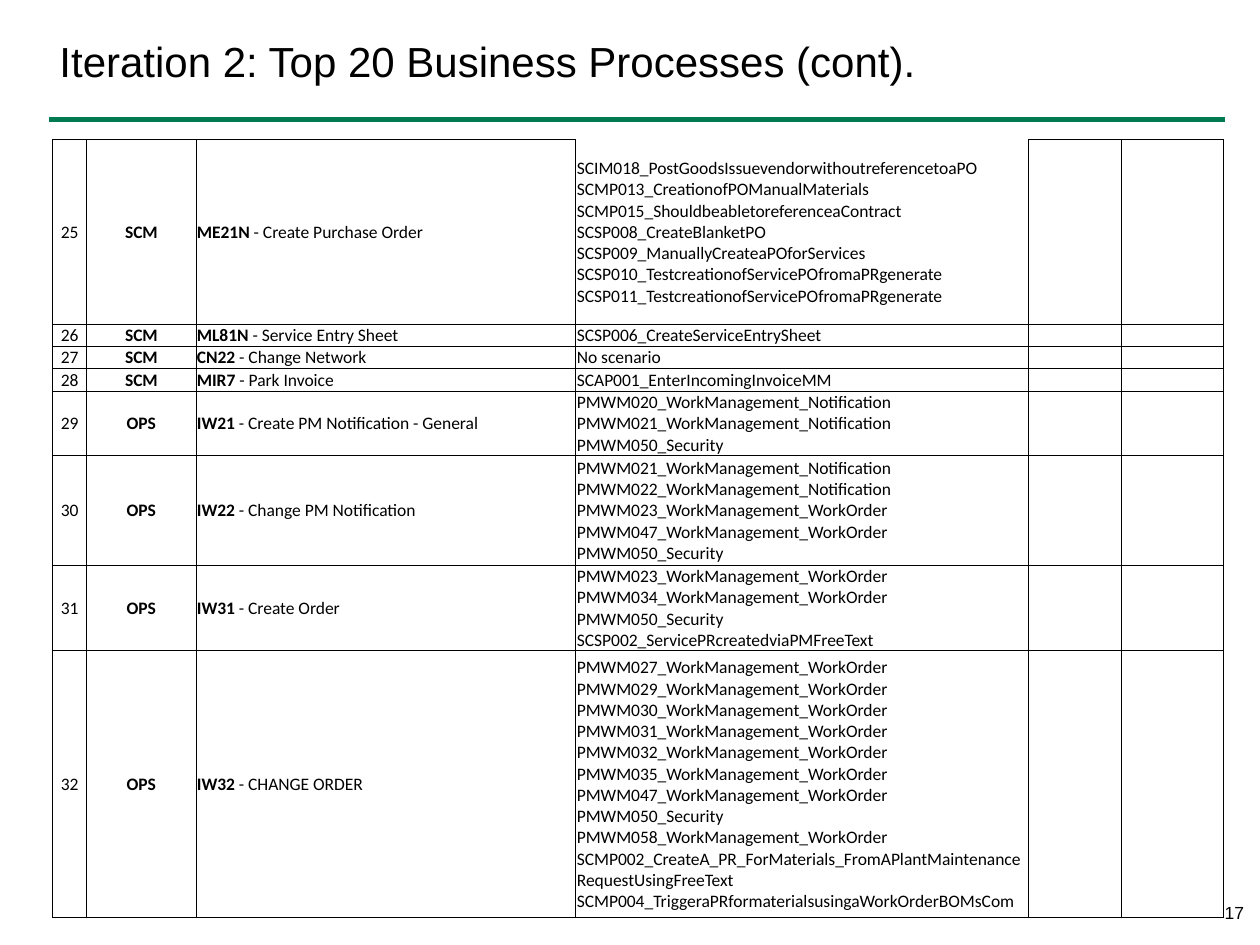
"""Builds the slide that lists business processes 25 to 32 and their test scenarios."""
from lxml.etree import SubElement
from pptx import Presentation
from pptx.dml.color import RGBColor
from pptx.enum.shapes import MSO_CONNECTOR as Connector
from pptx.enum.text import MSO_ANCHOR as Anchor, PP_ALIGN as Align
from pptx.oxml.ns import qn
from pptx.util import Cm, Pt

BLACK = RGBColor(0x00, 0x00, 0x00)
WHITE = RGBColor(0xFF, 0xFF, 0xFF)
GREEN = RGBColor(0x00, 0x7A, 0x50)

COLUMN_WIDTHS = [0.69, 2.2, 7.66, 9.13, 1.87, 2.06]
ROW_HEIGHTS = [3.71, 0.45, 0.45, 0.45, 1.31, 2.2, 1.73, 5.38]
FIRST_NUMBER = 25
SCENARIO_COLUMN = 3

PROCESSES = [
    ("SCM", "ME21N", "Create Purchase Order", [
        "SCIM018_PostGoodsIssuevendorwithoutreferencetoaPO",
        "SCMP013_CreationofPOManualMaterials",
        "SCMP015_ShouldbeabletoreferenceaContract",
        "SCSP008_CreateBlanketPO",
        "SCSP009_ManuallyCreateaPOforServices",
        "SCSP010_TestcreationofServicePOfromaPRgenerate",
        "SCSP011_TestcreationofServicePOfromaPRgenerate"]),
    ("SCM", "ML81N", "Service Entry Sheet", ["SCSP006_CreateServiceEntrySheet"]),
    ("SCM", "CN22", "Change Network", ["No scenario"]),
    ("SCM", "MIR7", "Park Invoice", ["SCAP001_EnterIncomingInvoiceMM"]),
    ("OPS", "IW21", "Create PM Notification - General", [
        "PMWM020_WorkManagement_Notification",
        "PMWM021_WorkManagement_Notification",
        "PMWM050_Security"]),
    ("OPS", "IW22", "Change PM Notification", [
        "PMWM021_WorkManagement_Notification",
        "PMWM022_WorkManagement_Notification",
        "PMWM023_WorkManagement_WorkOrder",
        "PMWM047_WorkManagement_WorkOrder",
        "PMWM050_Security"]),
    ("OPS", "IW31", "Create Order", [
        "PMWM023_WorkManagement_WorkOrder",
        "PMWM034_WorkManagement_WorkOrder",
        "PMWM050_Security",
        "SCSP002_ServicePRcreatedviaPMFreeText"]),
    ("OPS", "IW32", "CHANGE ORDER", [
        "PMWM027_WorkManagement_WorkOrder",
        "PMWM029_WorkManagement_WorkOrder",
        "PMWM030_WorkManagement_WorkOrder",
        "PMWM031_WorkManagement_WorkOrder",
        "PMWM032_WorkManagement_WorkOrder",
        "PMWM035_WorkManagement_WorkOrder",
        "PMWM047_WorkManagement_WorkOrder",
        "PMWM050_Security",
        "PMWM058_WorkManagement_WorkOrder",
        "SCMP002_CreateA_PR_ForMaterials_FromAPlantMaintenanceRequestUsingFreeText",
        "SCMP004_TriggeraPRformaterialsusingaWorkOrderBOMsCom"]),
]


class SlideBuilder:
    def __init__(self, page):
        self.page = page
        self.heading_font = "Arial"
        self.table_font = "Calibri"
        self.small = Pt(10)

    def style(self, span, name, size, bold=False):
        span.font.name = name
        span.font.size = size
        span.font.bold = bold
        span.font.color.rgb = BLACK

    def rule(self, left, right, top):
        line = self.page.shapes.add_connector(
            Connector.STRAIGHT, Cm(left), Cm(top), Cm(right), Cm(top))
        line.line.color.rgb = GREEN
        line.line.width = Pt(3)
        SubElement(line._element.spPr, qn("a:effectLst"))

    def label(self, text, area, size, align=Align.LEFT, anchor=Anchor.TOP, spacing=1.0):
        box = self.page.shapes.add_textbox(*map(Cm, area))
        frame = box.text_frame
        frame.word_wrap = True
        frame.vertical_anchor = anchor
        frame.text = text
        para = frame.paragraphs[0]
        para.alignment = align
        para.line_spacing = spacing
        self.style(para.runs[0], self.heading_font, size)
        return frame

    def border(self, cell, sides):
        properties = cell._tc.get_or_add_tcPr()
        for side in "LRTB":
            line = SubElement(properties, qn(f"a:ln{side}"), w=str(Pt(0.5)))
            if side in sides:
                fill = SubElement(line, qn("a:solidFill"))
                SubElement(fill, qn("a:srgbClr"), val=str(BLACK))
            else:
                SubElement(line, qn("a:noFill"))

    def cell(self, cell, paragraphs, align=Align.LEFT, sides="LRTB"):
        """Fills a cell with paragraphs, each a list of (text, bold) pairs."""
        self.border(cell, sides)
        cell.fill.solid()
        cell.fill.fore_color.rgb = WHITE
        cell.vertical_anchor = Anchor.MIDDLE
        cell.margin_left = cell.margin_right = cell.margin_top = Cm(0.02)
        cell.margin_bottom = 0
        frame = cell.text_frame
        for index, spans in enumerate(paragraphs):
            para = frame.add_paragraph() if index else frame.paragraphs[0]
            para.alignment = align
            for text, bold in spans:
                span = para.add_run()
                span.text = text
                self.style(span, self.table_font, self.small, bold)
            if not spans:
                SubElement(para._p, qn("a:endParaRPr"), sz="1000")

    def process_table(self, left, top):
        frame = self.page.shapes.add_table(
            len(PROCESSES), len(COLUMN_WIDTHS), Cm(left), Cm(top),
            Cm(sum(COLUMN_WIDTHS)), Cm(sum(ROW_HEIGHTS)))
        table = frame.table
        table.first_row = table.horz_banding = False
        for column, width in zip(table.columns, COLUMN_WIDTHS):
            column.width = Cm(width)
        for row, height in zip(table.rows, ROW_HEIGHTS):
            row.height = Cm(height)
        for index, (area, code, name, scenarios) in enumerate(PROCESSES):
            contents = [
                [[(str(FIRST_NUMBER + index), False)]],
                [[(area, True)]],
                [[(code, True), (f" - {name}", False)]],
                [[(scenario, False)] for scenario in scenarios],
                [[]],
                [[]],
            ]
            for column, paragraphs in enumerate(contents):
                align = Align.CENTER if column < 2 else Align.LEFT
                open_top = index == 0 and column == SCENARIO_COLUMN
                self.cell(table.cell(index, column), paragraphs, align,
                          "LRB" if open_top else "LRTB")


def main():
    deck = Presentation()
    deck.slide_width, deck.slide_height = Cm(25.4), Cm(19.05)
    builder = SlideBuilder(deck.slides.add_slide(deck.slide_layouts[6]))
    builder.rule(0.99, 24.69, 2.41)
    title = builder.label("Iteration 2: Top 20 Business Processes (cont).",
                          (1.07, 0.23, 20.73, 1.98), Pt(24), anchor=Anchor.MIDDLE)
    title.margin_left = title.margin_right = Cm(0.13)
    builder.label("17", (19.41, 18.14, 5.92, 0.99), builder.small,
                  align=Align.RIGHT, spacing=0.8)
    builder.process_table(1.06, 2.82)
    deck.save("out.pptx")


if __name__ == "__main__":
    main()
